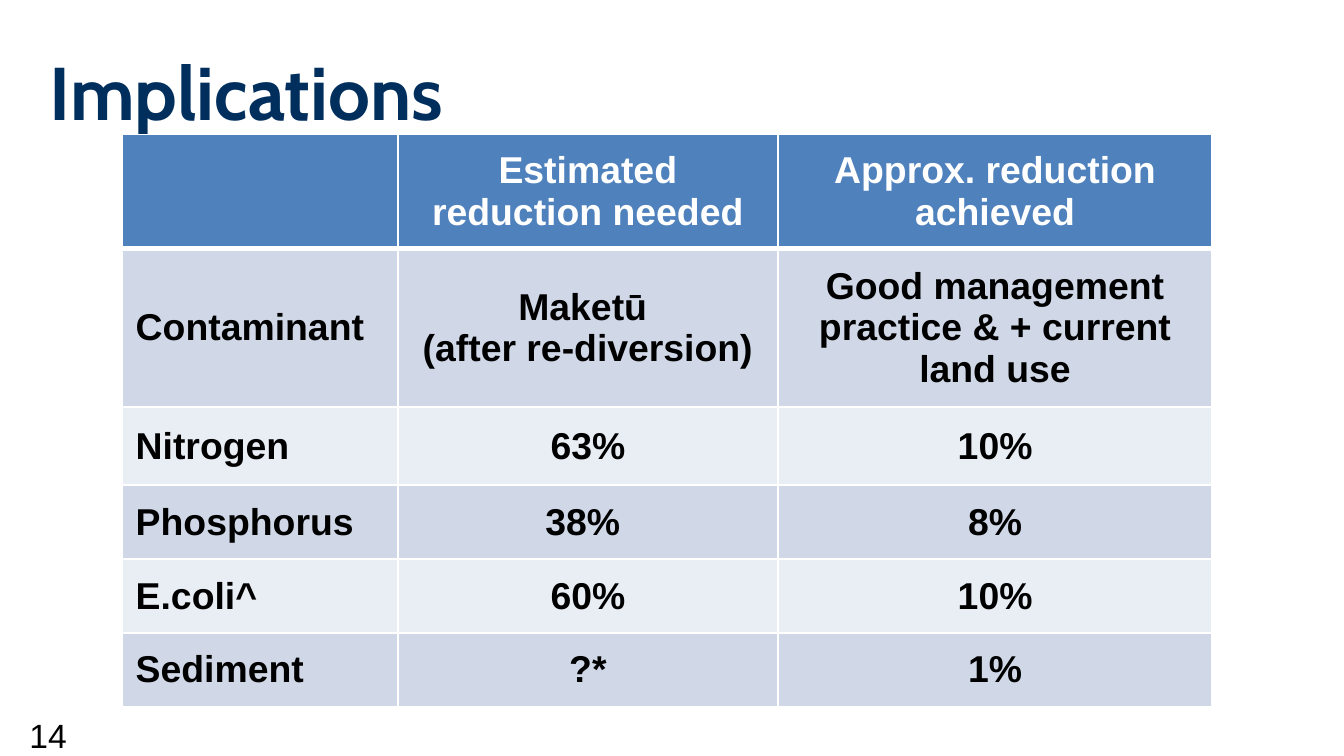
from dataclasses import dataclass

from lxml.etree import SubElement
from pptx import Presentation
from pptx.dml.color import RGBColor
from pptx.enum.text import MSO_ANCHOR, MSO_AUTO_SIZE, PP_ALIGN
from pptx.oxml.ns import qn
from pptx.slide import Slide
from pptx.table import _Cell
from pptx.text.text import TextFrame, _Paragraph
from pptx.util import Inches, Pt


@dataclass(frozen=True)
class Theme:
    title_font: str = "Cabin"
    body_font: str = "Arial"
    title_size: int = 40
    table_size: int = 20
    number_size: int = 18
    title: str = "002F5D"
    text: str = "000000"
    white: str = "FFFFFF"
    header: str = "4F81BD"
    bands: tuple[str, str] = ("D0D8E8", "E9EDF4")


@dataclass(frozen=True)
class Row:
    height: float
    texts: tuple[str, str, str]
    margin: float = 0.04


THEME = Theme()
SLIDE_WIDTH = 10
COL_WIDTHS = (2.05, 2.83, 3.23)
ROWS = (
    Row(0.85, ("", "Estimated reduction needed", "Approx. reduction achieved"), 0.09),
    Row(0.88, ("Contaminant", "Maketū \n(after re-diversion)",
               "Good management practice & + current land use"), 0.09),
    Row(0.58, ("Nitrogen", "63%", "10%")),
    Row(0.55, ("Phosphorus", "38% ", "8%")),
    Row(0.55, ("E.coli^", "60%", "10%")),
    Row(0.55, ("Sediment", "?*", "1%")),
)


def add_run(p: _Paragraph, text: str, font: str, size: int, color: str,
            bold: bool = False) -> None:
    r = p.add_run()
    r.text = text
    r.font.name = font
    r.font.size = Pt(size)
    r.font.bold = bold
    r.font.color.rgb = RGBColor.from_string(color)


def set_borders(cell: _Cell, top: int, bottom: int) -> None:
    """Draw white borders; must run before the cell's fill is set."""
    tc_pr = cell._tc.get_or_add_tcPr()
    for side, width in (("L", 1), ("R", 1), ("T", top), ("B", bottom)):
        ln = SubElement(tc_pr, qn(f"a:ln{side}"), w=str(Pt(width)))
        fill = SubElement(ln, qn("a:solidFill"))
        SubElement(fill, qn("a:srgbClr"), val=THEME.white)


def fill_text(tf: TextFrame, text: str, color: str, align: PP_ALIGN) -> None:
    for i, line in enumerate(text.split("\n")):
        p = tf.add_paragraph() if i else tf.paragraphs[0]
        p.alignment = align
        add_run(p, line, THEME.body_font, THEME.table_size, color, bold=True)


def add_reduction_table(s: Slide) -> None:
    frame = s.shapes.add_table(
        len(ROWS), len(COL_WIDTHS), Inches(0.91), Inches(1),
        Inches(sum(COL_WIDTHS)), Inches(sum(row.height for row in ROWS)))
    table = frame.table
    for col, width in zip(table.columns, COL_WIDTHS):
        col.width = Inches(width)
    for i, row in enumerate(ROWS):
        table.rows[i].height = Inches(row.height)
        fill = THEME.bands[(i - 1) % 2] if i else THEME.header
        color = THEME.text if i else THEME.white
        for j, text in enumerate(row.texts):
            cell = table.cell(i, j)
            set_borders(cell, top=3 if i == 1 else 1, bottom=1 if i else 3)
            cell.fill.solid()
            cell.fill.fore_color.rgb = RGBColor.from_string(fill)
            cell.vertical_anchor = MSO_ANCHOR.MIDDLE
            cell.margin_left = cell.margin_right = Inches(0.1)
            cell.margin_top = cell.margin_bottom = Inches(row.margin)
            if text:
                align = PP_ALIGN.CENTER if j else PP_ALIGN.LEFT
                fill_text(cell.text_frame, text, color, align)


def add_title(s: Slide, text: str) -> None:
    sp = s.shapes.title
    sp.left, sp.top = Inches(0.27), Inches(0.29)
    sp.width, sp.height = Inches(8.5), Inches(0.55)
    tf = sp.text_frame
    tf.auto_size = MSO_AUTO_SIZE.NONE
    tf.vertical_anchor = MSO_ANCHOR.TOP
    p = tf.paragraphs[0]
    p.alignment = PP_ALIGN.LEFT
    add_run(p, text, THEME.title_font, THEME.title_size, THEME.title, bold=True)


def add_page_number(s: Slide, text: str) -> None:
    sp = s.shapes.add_textbox(Inches(0.12), Inches(5.28), Inches(2.08), Inches(0.38))
    tf = sp.text_frame
    tf.word_wrap = True
    tf.vertical_anchor = MSO_ANCHOR.MIDDLE
    add_run(tf.paragraphs[0], text, THEME.body_font, THEME.number_size, THEME.text)


def main() -> None:
    prs = Presentation()
    prs.slide_width = Inches(SLIDE_WIDTH)
    prs.slide_height = Inches(SLIDE_WIDTH * 9 / 16)
    s = prs.slides.add_slide(prs.slide_layouts.get_by_name("Title Only"))
    add_title(s, "Implications")
    add_page_number(s, "14")
    add_reduction_table(s)
    prs.save("out.pptx")


if __name__ == "__main__":
    main()
